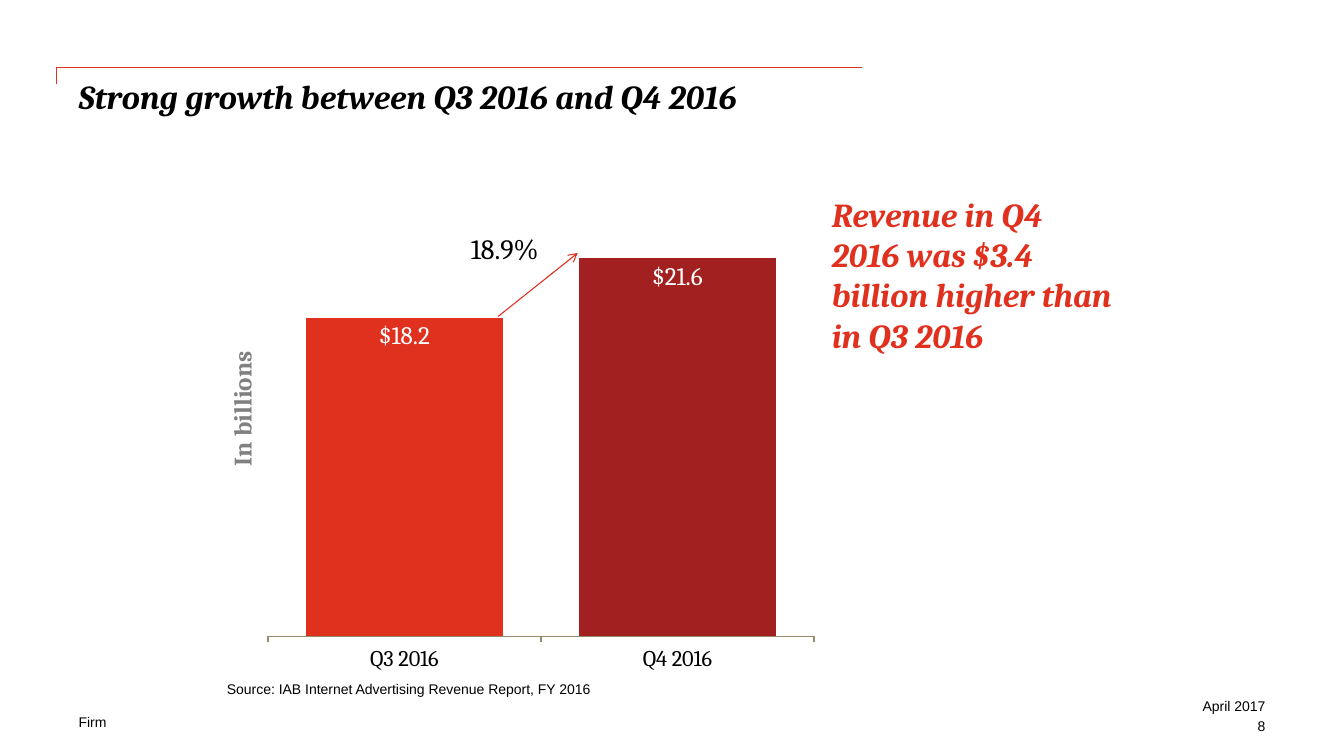
"""Build the quarterly revenue growth slide."""
from dataclasses import dataclass

from lxml import etree
from pptx import Presentation
from pptx.chart.data import CategoryChartData
from pptx.dml.color import RGBColor
from pptx.enum.chart import XL_CHART_TYPE, XL_LABEL_POSITION, XL_TICK_LABEL_POSITION, XL_TICK_MARK
from pptx.enum.shapes import MSO_CONNECTOR
from pptx.enum.text import MSO_ANCHOR, MSO_AUTO_SIZE, PP_ALIGN
from pptx.oxml.ns import qn
from pptx.util import Inches, Pt

COLUMNS = XL_CHART_TYPE.COLUMN_CLUSTERED
INSIDE_END = XL_LABEL_POSITION.INSIDE_END
LABELS_LOW = XL_TICK_LABEL_POSITION.LOW
TICK_OUT = XL_TICK_MARK.OUTSIDE
TICK_NONE = XL_TICK_MARK.NONE
STRAIGHT = MSO_CONNECTOR.STRAIGHT
TOP, BOTTOM = MSO_ANCHOR.TOP, MSO_ANCHOR.BOTTOM
LEFT, CENTER, RIGHT = PP_ALIGN.LEFT, PP_ALIGN.CENTER, PP_ALIGN.RIGHT
NO_AUTOFIT = MSO_AUTO_SIZE.NONE


@dataclass(frozen=True)
class Theme:
    """Fonts, colours and type sizes of the slide."""
    serif: str = "Cambria"
    sans: str = "Arial"
    black: str = "000000"
    white: str = "FFFFFF"
    grey: str = "808080"
    red: str = "E0301E"
    dark_red: str = "A32020"
    arrow: str = "E02B19"
    axis: str = "968C6D"
    heading: int = 24
    callout: int = 20
    label: int = 18
    category: int = 16
    small: int = 10


THEME = Theme()


def rgb(color):
    """Turn a hex string into a colour."""
    return RGBColor.from_string(color)


def place(sp, left, top, width, height):
    """Set the position and size of a shape in inches."""
    sp.left, sp.top = Inches(left), Inches(top)
    sp.width, sp.height = Inches(width), Inches(height)


def style_font(font, size, color, name=THEME.serif, bold=False, italic=False):
    """Apply a typeface, size, colour and weight."""
    font.name, font.size = name, Pt(size)
    font.bold, font.italic = bold, italic
    font.color.rgb = rgb(color)


def write_text(sp, text, size, color=THEME.black, align=LEFT, anchor=TOP, **font):
    """Fill a shape with one formatted paragraph."""
    tf = sp.text_frame
    tf.word_wrap = True
    tf.auto_size = NO_AUTOFIT
    tf.vertical_anchor = anchor
    tf.margin_left = tf.margin_top = tf.margin_right = tf.margin_bottom = 0
    p = tf.paragraphs[0]
    p.alignment = align
    p.space_before = Pt(0)
    r = p.add_run()
    r.text = text
    style_font(r.font, size, color, **font)
    return p


def add_text(slide, box, text, size, rotation=0, **style):
    """Add a text box."""
    sp = slide.shapes.add_textbox(*map(Inches, box))
    sp.rotation = rotation
    write_text(sp, text, size, **style)


def fill_placeholder(sp, box, text, color):
    """Move a placeholder and write a heading without a bullet."""
    place(sp, *box)
    p = write_text(sp, text, THEME.heading, color=color, bold=True, italic=True)
    pPr = p._p.get_or_add_pPr()
    pPr.set("marL", "0")
    pPr.set("indent", "0")
    etree.SubElement(pPr, qn("a:buNone"))


def add_bracket(slide, left, top, right, bottom):
    """Draw the corner line above the title."""
    fb = slide.shapes.build_freeform(Inches(left), Inches(bottom))
    corners = [(left, top), (right, top)]
    fb.add_line_segments([(Inches(x), Inches(y)) for x, y in corners], close=False)
    sp = fb.convert_to_shape()
    sp.shadow.inherit = False
    sp.fill.background()
    sp.line.color.rgb = rgb(THEME.red)
    sp.line.width = Pt(1)


def add_arrow(slide, start, end):
    """Draw a thin arrow between two points."""
    cn = slide.shapes.add_connector(STRAIGHT, *map(Inches, start + end))
    cn.line.color.rgb = rgb(THEME.arrow)
    cn.line.width = Pt(0.75)
    etree.SubElement(cn.line._get_or_add_ln(), qn("a:tailEnd"), type="arrow")
    etree.SubElement(cn._element.spPr, qn("a:effectLst"))


def set_plot_layout(chart, **fractions):
    """Fix the inner plot area as fractions of the chart."""
    plot_area = chart._chartSpace.chart.plotArea
    for old in plot_area.findall(qn("c:layout")):
        plot_area.remove(old)
    layout = etree.Element(qn("c:layout"))
    manual = etree.SubElement(layout, qn("c:manualLayout"))
    settings = {"layoutTarget": "inner", "xMode": "edge", "yMode": "edge", **fractions}
    for tag, value in settings.items():
        etree.SubElement(manual, qn(f"c:{tag}"), val=str(value))
    plot_area.insert(0, layout)


def add_revenue_chart(slide, box, revenue, colors):
    """Add the column chart with one colour per quarter."""
    data = CategoryChartData(number_format='"$"#,##0.0')
    data.categories = list(revenue)
    data.add_series("Revenue", list(revenue.values()))
    chart = slide.shapes.add_chart(COLUMNS, *map(Inches, box), data).chart
    chart.has_legend = chart.has_title = False
    style_font(chart.font, THEME.label, THEME.black)
    set_plot_layout(chart, x=0.07, y=0.01, w=0.93, h=0.9)

    values = chart.value_axis
    values.minimum_scale, values.maximum_scale = 0, 25
    values.has_major_gridlines = False
    values.visible = False

    quarters = chart.category_axis
    quarters.major_tick_mark, quarters.minor_tick_mark = TICK_OUT, TICK_NONE
    quarters.tick_label_position = LABELS_LOW
    quarters.format.line.color.rgb = rgb(THEME.axis)
    quarters.format.line.width = Pt(1)
    style_font(quarters.tick_labels.font, THEME.category, THEME.black)

    plot = chart.plots[0]
    plot.gap_width = 39
    plot.vary_by_categories = False
    plot.has_data_labels = True
    labels = plot.data_labels
    labels.show_value = True
    labels.position = INSIDE_END
    labels.number_format, labels.number_format_is_linked = '"$"#,##0.0', False
    style_font(labels.font, THEME.label, THEME.white)
    for i, color in enumerate(colors):
        fill = plot.series[0].points[i].format.fill
        fill.solid()
        fill.fore_color.rgb = rgb(color)


def main():
    """Build and save the slide."""
    prs = Presentation()
    prs.slide_width, prs.slide_height = Inches(13.33), Inches(7.5)
    slide = prs.slides.add_slide(prs.slide_layouts[1])

    add_bracket(slide, 0.56, 0.67, 8.55, 0.83)
    fill_placeholder(slide.shapes.title, (0.78, 0.75, 7.78, 1),
                     "Strong growth between Q3 2016 and Q4 2016", THEME.black)
    fill_placeholder(slide.placeholders[1], (8.25, 1.92, 2.83, 2.33),
                     "Revenue in Q4 2016 was $3.4 billion higher than in Q3 2016", THEME.red)

    add_revenue_chart(slide, (2.25, 1.92, 5.83, 4.83),
                      {"Q3 2016": 18.2, "Q4 2016": 21.6}, (THEME.red, THEME.dark_red))
    add_text(slide, (1.08, 3.89, 2.66, 0.33), "In billions", THEME.label,
             rotation=270, color=THEME.grey, align=CENTER, bold=True)
    add_arrow(slide, (4.94, 3.14), (5.73, 2.51))
    add_text(slide, (4.67, 2.3, 0.82, 0.3), "18.9%", THEME.callout)

    small_texts = [
        ((2.25, 6.75, 5.75, 0.17), "Source: IAB Internet Advertising Revenue Report, FY 2016",
         LEFT, BOTTOM),
        ((0.78, 7.08, 3.78, 0.17), "Firm", LEFT, TOP),
        ((10.33, 6.92, 2.22, 0.17), "April 2017", RIGHT, TOP),
        ((10.33, 7.12, 2.22, 0.17), "8", RIGHT, TOP),
    ]
    for box, text, align, anchor in small_texts:
        add_text(slide, box, text, THEME.small, align=align, anchor=anchor, name=THEME.sans)

    prs.save("out.pptx")


if __name__ == "__main__":
    main()
